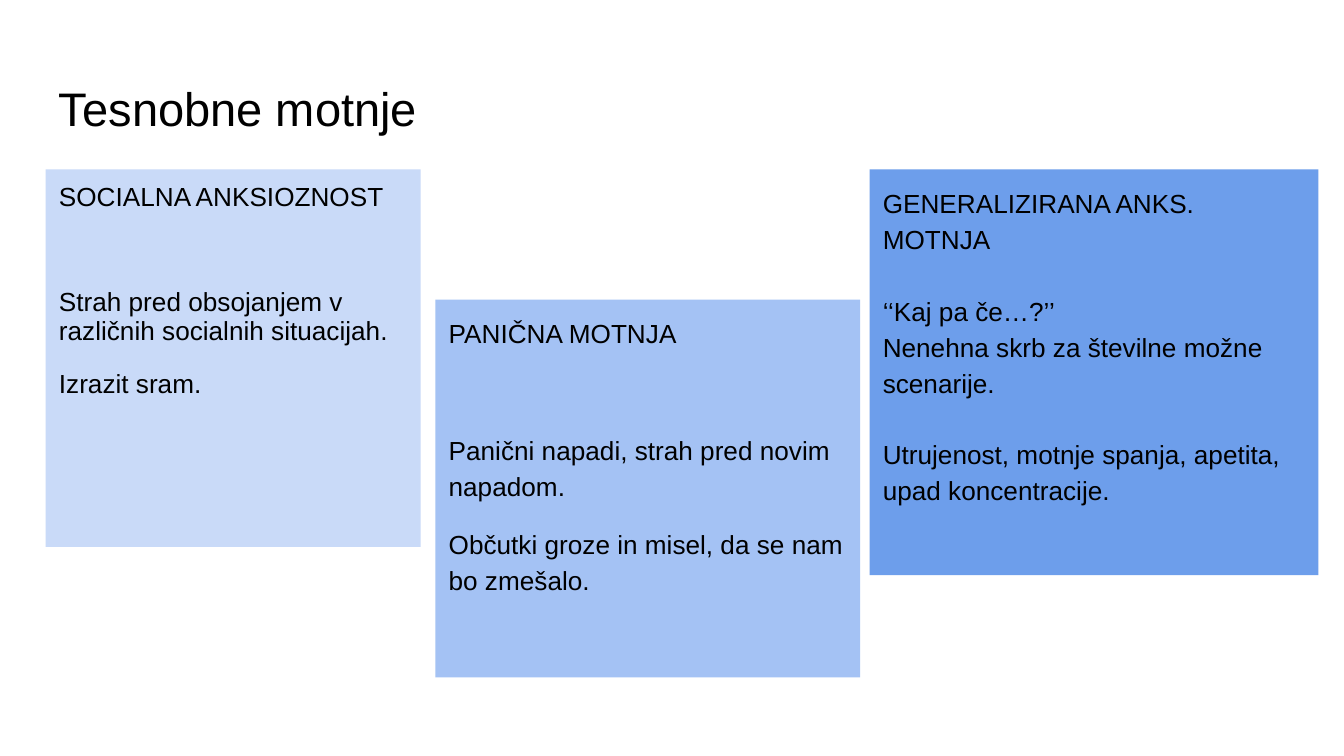
from pptx import Presentation
from pptx.dml.color import RGBColor as RGB
from pptx.enum.shapes import MSO_SHAPE as Shape
from pptx.enum.text import MSO_ANCHOR as Anchor, PP_ALIGN as Align
from pptx.util import Emu, Pt

SCALE = 4572
FONT = "Arial"
BLACK = RGB(0x00, 0x00, 0x00)
PALE = RGB(0xC9, 0xDA, 0xF8)
MID = RGB(0xA4, 0xC2, 0xF4)
DEEP = RGB(0x6D, 0x9E, 0xEB)

CARDS = [
    ((68, 252, 558, 562), PALE, 0.95, [
        ("SOCIALNA ANKSIOZNOST", 0),
        ("Strah pred obsojanjem v različnih socialnih situacijah.", 40),
        ("Izrazit sram.", 12),
    ]),
    ((1294, 252, 668, 604), DEEP, 1.15, [
        ("GENERALIZIRANA ANKS. MOTNJA", 0),
        ("‘‘Kaj pa če…?’’", 19),
        ("Nenehna skrb za številne možne scenarije.", 0),
        ("Utrujenost, motnje spanja, apetita, upad koncentracije.", 19),
    ]),
    ((648, 446, 632, 562), MID, 1.15, [
        ("PANIČNA MOTNJA", 0),
        ("Panični napadi, strah pred novim napadom.", 43),
        ("Občutki groze in misel, da se nam bo zmešalo.", 12),
    ]),
]


def px(n):
    return Emu(n * SCALE)


def set_up(frame, anchor):
    frame.word_wrap = True
    frame.vertical_anchor = anchor
    frame.margin_left = frame.margin_right = px(20)
    frame.margin_top = frame.margin_bottom = px(20)


def add_run(para, text, size):
    run = para.add_run()
    run.text = text
    run.font.name = FONT
    run.font.size = Pt(size)
    run.font.color.rgb = BLACK


def add_title(slide, box, text):
    frame = slide.shapes.add_textbox(*map(px, box)).text_frame
    set_up(frame, Anchor.MIDDLE)
    add_run(frame.paragraphs[0], text, 25.2)


def add_card(slide, box, fill, lead, lines):
    card = slide.shapes.add_shape(Shape.RECTANGLE, *map(px, box))
    card.shadow.inherit = False
    card.fill.solid()
    card.fill.fore_color.rgb = fill
    card.line.fill.background()
    frame = card.text_frame
    set_up(frame, Anchor.TOP)
    for i, (text, gap) in enumerate(lines):
        para = frame.add_paragraph() if i else frame.paragraphs[0]
        para.alignment = Align.LEFT
        para.line_spacing = lead
        para.space_before = Pt(gap)
        add_run(para, text, 14)


def main():
    deck = Presentation()
    deck.slide_width, deck.slide_height = px(2000), px(1125)
    slide = deck.slides.add_slide(deck.slide_layouts[6])
    add_title(slide, (68, 97, 1864, 126), "Tesnobne motnje")
    for card in CARDS:
        add_card(slide, *card)
    deck.save("out.pptx")


if __name__ == "__main__":
    main()
